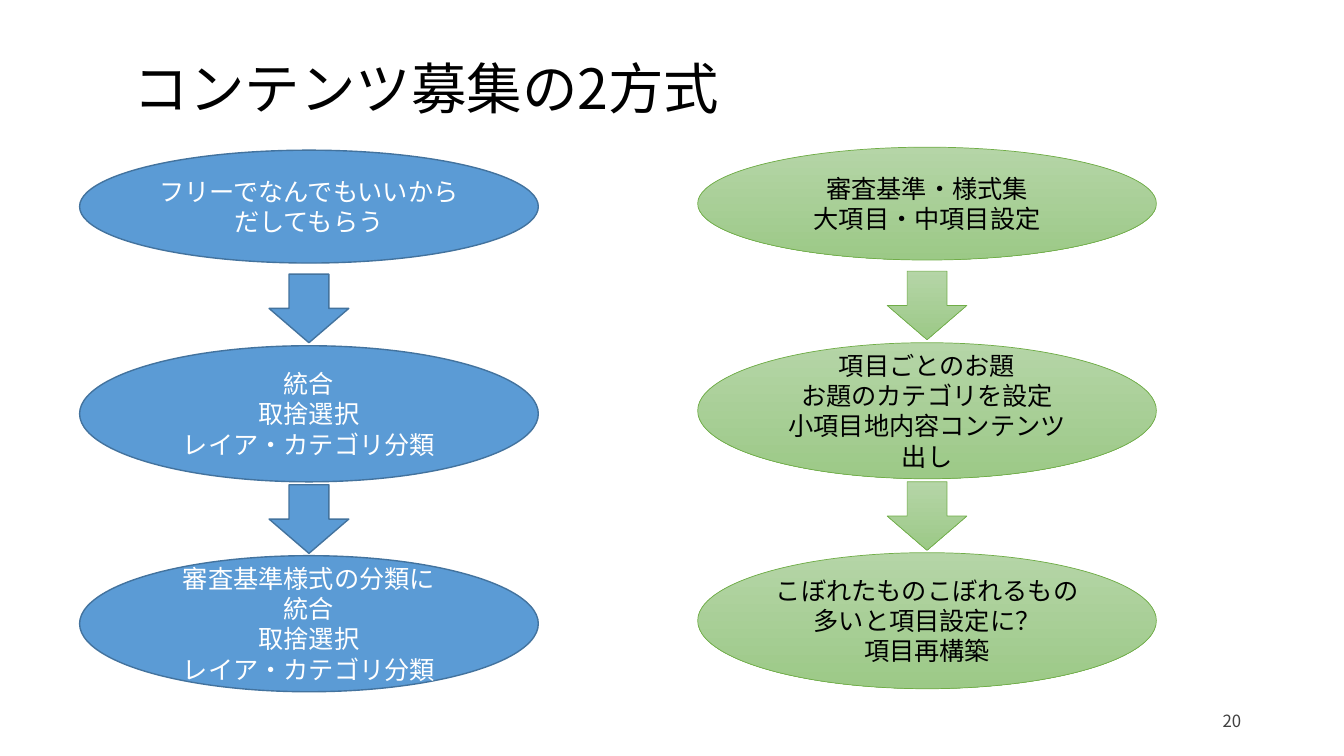
from dataclasses import dataclass
from lxml.etree import SubElement
from pptx import Presentation
from pptx.dml.color import RGBColor as Rgb
from pptx.enum.shapes import MSO_SHAPE as Kind
from pptx.enum.text import MSO_ANCHOR as Anchor, PP_ALIGN as Align
from pptx.oxml.ns import qn
from pptx.util import Inches, Pt


@dataclass(frozen=True)
class Theme:
    blue: str = "5B9BD5"
    navy: str = "43739E"
    light: str = "B5D5A7"
    leaf: str = "9CC987"
    green: str = "70AD47"
    white: str = "FFFFFF"
    black: str = "000000"
    gray: str = "404040"
    head: float = 39.6
    body: float = 18
    note: float = 12
    sans: str = "Noto Sans CJK JP"
    round: str = "League Spartan"


@dataclass(frozen=True)
class Box:
    left: float
    top: float
    wide: float
    high: float


@dataclass(frozen=True)
class Flow:
    mid: float
    lift: float
    fill: tuple[str, ...]
    edge: str
    line: float
    ink: str
    steps: tuple[str, ...]


@dataclass(frozen=True)
class Row:
    top: float
    high: float


look = Theme()
WIDE, HIGH = Inches(13.33), Inches(7.5)
OVAL, ARROW = 34.13, 5.93
STEPS = (Row(19.87, 14.93), Row(45.73, 18), Row(73.5, 18))
LINKS = (Row(36.27, 9.07), Row(64.13, 9.07))

FLOWS = (
    Flow(22.99, 0, (look.blue,), look.navy, 1, look.white, (
        "フリーでなんでもいいから\nだしてもらう",
        "統合\n取捨選択\nレイア・カテゴリ分類",
        "審査基準様式の分類に\n統合\n取捨選択\nレイア・カテゴリ分類",
    )),
    Flow(68.98, 0.4, (look.light, look.leaf), look.green, 0.5, look.black, (
        "審査基準・様式集\n大項目・中項目設定",
        "項目ごとのお題\nお題のカテゴリを設定\n小項目地内容コンテンツ\n出し",
        "こぼれたものこぼれるもの\n多いと項目設定に？\n項目再構築",
    )),
)


def place(box: Box) -> tuple[int, ...]:
    return tuple(int(part * side / 100) for part, side in (
        (box.left, WIDE), (box.top, HIGH), (box.wide, WIDE), (box.high, HIGH)))


def write(shape, text: str, *, size: float, ink: str, font: str, align: Align) -> None:
    frame = shape.text_frame
    frame.word_wrap = True
    frame.vertical_anchor = Anchor.MIDDLE
    frame.text = text
    for para in frame.paragraphs:
        para.alignment = align
        for run in para.runs:
            run.font.size = Pt(size)
            run.font.name = font
            run.font.color.rgb = Rgb.from_string(ink)
            SubElement(run.font._element, qn("a:ea"), typeface=font)


def label(slide, box: Box, text: str, **style) -> None:
    write(slide.shapes.add_textbox(*place(box)), text, font=look.sans, **style)


def draw(slide, kind: Kind, flow: Flow, row: Row, wide: float):
    box = Box(flow.mid - wide / 2, row.top - flow.lift, wide, row.high)
    shape = slide.shapes.add_shape(kind, *place(box))
    shape.shadow.inherit = False
    if len(flow.fill) == 1:
        shape.fill.solid()
        shape.fill.fore_color.rgb = Rgb.from_string(flow.fill[0])
    else:
        shape.fill.gradient()
        shape.fill.gradient_angle = 270
        for stop, tone in zip(shape.fill.gradient_stops, flow.fill):
            stop.color.rgb = Rgb.from_string(tone)
    shape.line.color.rgb = Rgb.from_string(flow.edge)
    shape.line.width = Pt(flow.line)
    return shape


def main() -> None:
    deck = Presentation()
    deck.slide_width, deck.slide_height = WIDE, HIGH
    slide = deck.slides.add_slide(deck.slide_layouts[6])
    label(slide, Box(9.23, 6.27, 86.27, 10.67), "コンテンツ募集の2方式",
          size=look.head, ink=look.black, align=Align.LEFT)
    label(slide, Box(66.24, 92.67, 26.86, 5.33), "20",
          size=look.note, ink=look.gray, align=Align.RIGHT)
    for flow in FLOWS:
        for row, text in zip(STEPS, flow.steps):
            oval = draw(slide, Kind.OVAL, flow, row, OVAL)
            write(oval, text, size=look.body, ink=flow.ink,
                  font=look.round, align=Align.CENTER)
        for row in LINKS:
            draw(slide, Kind.DOWN_ARROW, flow, row, ARROW)
    deck.save("out.pptx")


if __name__ == "__main__":
    main()
